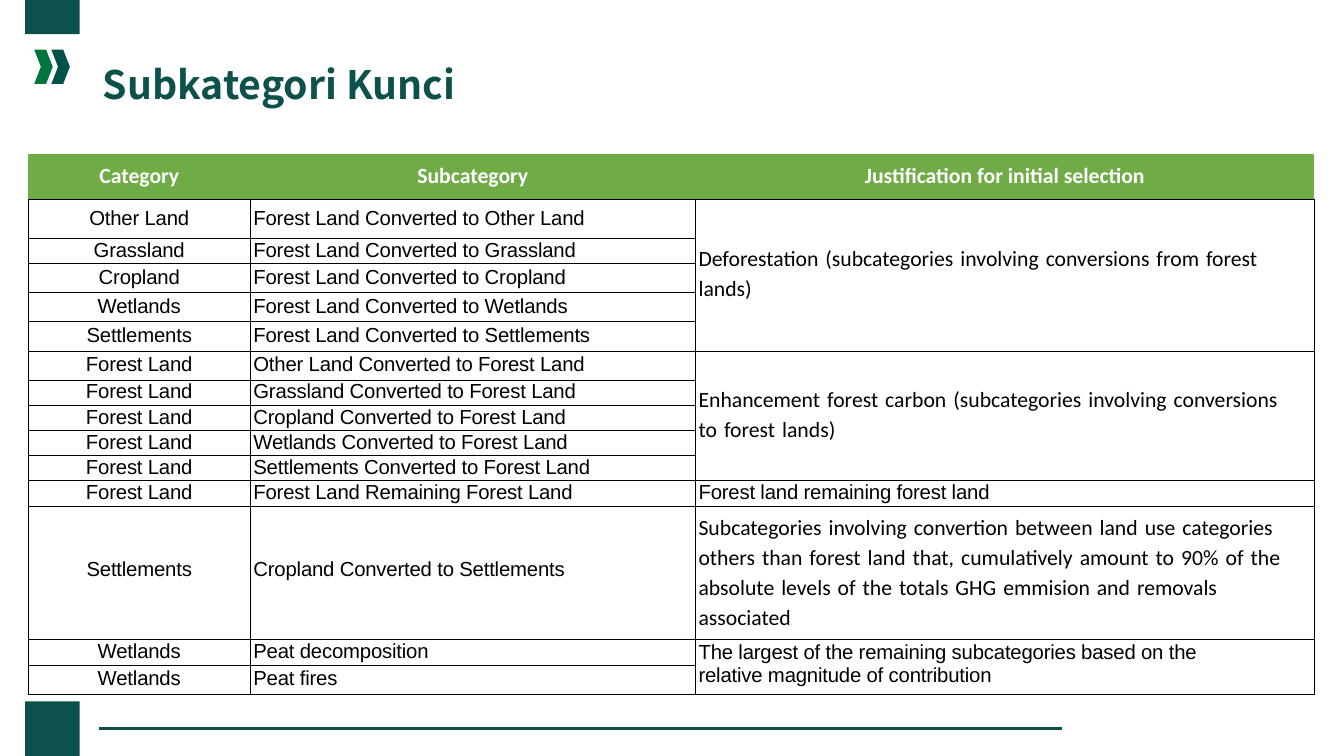
from dataclasses import dataclass
from typing import Optional

from lxml.etree import SubElement
from pptx import Presentation
from pptx.dml.color import RGBColor
from pptx.enum.shapes import MSO_CONNECTOR as Connector, MSO_SHAPE as Preset
from pptx.enum.text import MSO_ANCHOR as Anchor, MSO_AUTO_SIZE as AutoSize, PP_ALIGN as Align
from pptx.oxml.ns import qn
from pptx.util import Pt


@dataclass(frozen=True)
class Theme:
    dark: str = "0D514D"
    chevron_green: str = "00743E"
    chevron_teal: str = "00504B"
    header: str = "6FAC46"
    white: str = "FFFFFF"
    black: str = "000000"
    title_font: str = "Noto Sans CJK KR"
    note_font: str = "Calibri"
    body_font: str = "Arial"
    title_size: float = 28
    note_size: float = 15.5
    body_size: float = 14.5


THEME = Theme()


@dataclass(frozen=True)
class Block:
    preset: Preset
    left: float
    top: float
    width: float
    height: float
    color: str


@dataclass(frozen=True)
class Note:
    text: str
    rows: int = 1
    top: float = 0.2
    right: float = 16
    font: str = THEME.note_font
    size: float = THEME.note_size
    line: float = 1.12
    tracking: float = 0
    word_gap: float = 1.5


@dataclass(frozen=True)
class Entry:
    category: str
    subcategory: str
    height: float = 18
    top: float = 0.2
    note: Optional[Note] = None


BLOCKS = [
    Block(Preset.RECTANGLE, 18, 0, 39, 24.5, THEME.dark),
    Block(Preset.RECTANGLE, 18, 501, 39, 39, THEME.dark),
]
CHEVRONS = [
    Block(Preset.CHEVRON, 24.5, 35.5, 13.2, 24.5, THEME.chevron_green),
    Block(Preset.CHEVRON, 36.7, 35.5, 13.2, 24.5, THEME.chevron_teal),
]

HEADINGS = ["Category", "Subcategory", "Justification for initial selection"]
COLUMN_WIDTHS = [158.5, 318, 442]
HEADER_HEIGHT = 32.2
TALL = dict(height=20.8, top=1.7)
PLAIN = dict(font=THEME.body_font, size=THEME.body_size, tracking=-0.15, word_gap=0)

ENTRIES = [
    Entry("Other Land", "Forest Land Converted to Other Land", 28, 5.3, Note(
        "Deforestation (subcategories involving conversions from forest lands)", 5, 31)),
    Entry("Grassland", "Forest Land Converted to Grassland"),
    Entry("Cropland", "Forest Land Converted to Cropland", **TALL),
    Entry("Wetlands", "Forest Land Converted to Wetlands", **TALL),
    Entry("Settlements", "Forest Land Converted to Settlements", **TALL),
    Entry("Forest Land", "Other Land Converted to Forest Land", **TALL, note=Note(
        "Enhancement forest carbon (subcategories involving conversions to forest lands)", 5, 23.5)),
    Entry("Forest Land", "Grassland Converted to Forest Land"),
    Entry("Forest Land", "Cropland Converted to Forest Land"),
    Entry("Forest Land", "Wetlands Converted to Forest Land"),
    Entry("Forest Land", "Settlements Converted to Forest Land"),
    Entry("Forest Land", "Forest Land Remaining Forest Land", note=Note(
        "Forest land remaining forest land", line=1, **PLAIN)),
    Entry("Settlements", "Cropland Converted to Settlements", 95.6, 37, Note(
        "Subcategories involving convertion between land use categories others than forest land "
        "that, cumulatively amount to 90% of the absolute levels of the totals GHG emmision and "
        "removals associated", top=4.3)),
    Entry("Wetlands", "Peat decomposition", note=Note(
        "The largest of the remaining subcategories based on the relative magnitude of contribution",
        2, right=60, line=1.03, **PLAIN)),
    Entry("Wetlands", "Peat fires", **TALL),
]


def rgb(color: str) -> RGBColor:
    return RGBColor.from_string(color)


def write(frame, text: str, *, font: str, size: float, color: str = THEME.black,
          bold: bool = False, align: Align = Align.LEFT, line: float = 1,
          tracking: float = 0, word_gap: float = 0) -> None:
    """Fill the first paragraph; word_gap widens the spaces between words."""
    para = frame.paragraphs[0]
    para.alignment, para.line_spacing = align, line
    pieces = [text]
    if word_gap:
        pieces = [piece for word in text.split() for piece in (" ", word)][1:]
    for piece in pieces:
        span = para.add_run()
        span.text = piece
        span.font.name, span.font.size, span.font.bold = font, Pt(size), bold
        span.font.color.rgb = rgb(color)
        spacing = word_gap if piece == " " else tracking
        properties = span.font._element
        if spacing:
            properties.set("spc", str(round(spacing * 100)))
        SubElement(properties, qn("a:ea")).set("typeface", font)


def draw_block(shapes, block: Block) -> None:
    box = shapes.add_shape(block.preset, Pt(block.left), Pt(block.top),
                           Pt(block.width), Pt(block.height))
    box.shadow.inherit = False
    box.fill.solid()
    box.fill.fore_color.rgb = rgb(block.color)
    box.line.fill.background()
    if block.preset == Preset.CHEVRON:
        box.adjustments[0] = 0.36


def set_borders(cell, sides: str) -> None:
    properties = cell._tc.get_or_add_tcPr()
    for position, side in enumerate("LRTB"):
        edge = properties.makeelement(qn(f"a:ln{side}"), {"w": str(Pt(0.75))})
        if side in sides:
            fill = SubElement(edge, qn("a:solidFill"))
            SubElement(fill, qn("a:srgbClr")).set("val", THEME.black)
        else:
            SubElement(edge, qn("a:noFill"))
        properties.insert(position, edge)


def fill_cell(cell, text: str, *, top: float, left: float = 0, right: float = 0, **style) -> None:
    cell.margin_left, cell.margin_right = Pt(left), Pt(right)
    cell.margin_top, cell.margin_bottom = Pt(top), Pt(0)
    cell.vertical_anchor = Anchor.TOP
    write(cell.text_frame, text, **style)


def draw_table(page) -> None:
    height = HEADER_HEIGHT + sum(entry.height for entry in ENTRIES)
    table = page.shapes.add_table(len(ENTRIES) + 1, len(HEADINGS), Pt(20.2), Pt(110.2),
                                  Pt(sum(COLUMN_WIDTHS)), Pt(height)).table
    table.first_row = table.horz_banding = False
    for column, width in zip(table.columns, COLUMN_WIDTHS):
        column.width = Pt(width)

    # Header row
    table.rows[0].height = Pt(HEADER_HEIGHT)
    for index, heading in enumerate(HEADINGS):
        cell = table.cell(0, index)
        fill_cell(cell, heading, top=6.1, font=THEME.note_font, size=THEME.note_size,
                  color=THEME.white, bold=True, align=Align.CENTER)
        cell.fill.solid()
        cell.fill.fore_color.rgb = rgb(THEME.header)
        set_borders(cell, "B")

    # Body rows, with each note spanning its group
    body = dict(font=THEME.body_font, size=THEME.body_size, tracking=-0.15)
    for index, entry in enumerate(ENTRIES, start=1):
        table.rows[index].height = Pt(entry.height)
        category, subcategory, reason = (table.cell(index, column) for column in range(3))
        for cell in (category, subcategory, reason):
            cell.fill.background()
            set_borders(cell, "LRTB")
            cell.margin_top = cell.margin_bottom = Pt(0)
        fill_cell(category, entry.category, top=entry.top, align=Align.CENTER, **body)
        fill_cell(subcategory, entry.subcategory, top=entry.top, left=2.3, **body)
        note = entry.note
        if note:
            if note.rows > 1:
                reason.merge(table.cell(index + note.rows - 1, 2))
            fill_cell(reason, note.text, top=note.top, left=2.3, right=note.right,
                      font=note.font, size=note.size, line=note.line,
                      tracking=note.tracking, word_gap=note.word_gap)
        elif not reason.is_spanned:
            raise ValueError("every row needs a note or a span")


def draw_title(page) -> None:
    title = page.shapes.title
    title.left, title.top, title.width, title.height = Pt(44), Pt(19.5), Pt(872.5), Pt(60)
    frame = title.text_frame
    frame.auto_size, frame.vertical_anchor, frame.word_wrap = AutoSize.NONE, Anchor.TOP, True
    frame.margin_left, frame.margin_top = Pt(29.5), Pt(23.8)
    frame.margin_right = frame.margin_bottom = Pt(0)
    write(frame, "Subkategori Kunci", font=THEME.title_font, size=THEME.title_size,
          color=THEME.dark, bold=True)


def main() -> None:
    deck = Presentation()
    deck.slide_width, deck.slide_height = Pt(960), Pt(540)
    page = deck.slides.add_slide(deck.slide_layouts[5])

    # Corner blocks, chevrons and footer line
    for block in BLOCKS:
        draw_block(page.shapes, block)
    chevron_group = page.shapes.add_group_shape()
    for chevron in CHEVRONS:
        draw_block(chevron_group.shapes, chevron)
    rule = page.shapes.add_connector(Connector.STRAIGHT, Pt(71), Pt(520.5), Pt(758.5), Pt(520.5))
    rule.line.color.rgb, rule.line.width = rgb(THEME.dark), Pt(2.25)
    SubElement(rule._element.spPr, qn("a:effectLst"))

    draw_title(page)
    draw_table(page)
    deck.save("out.pptx")


if __name__ == "__main__":
    main()
